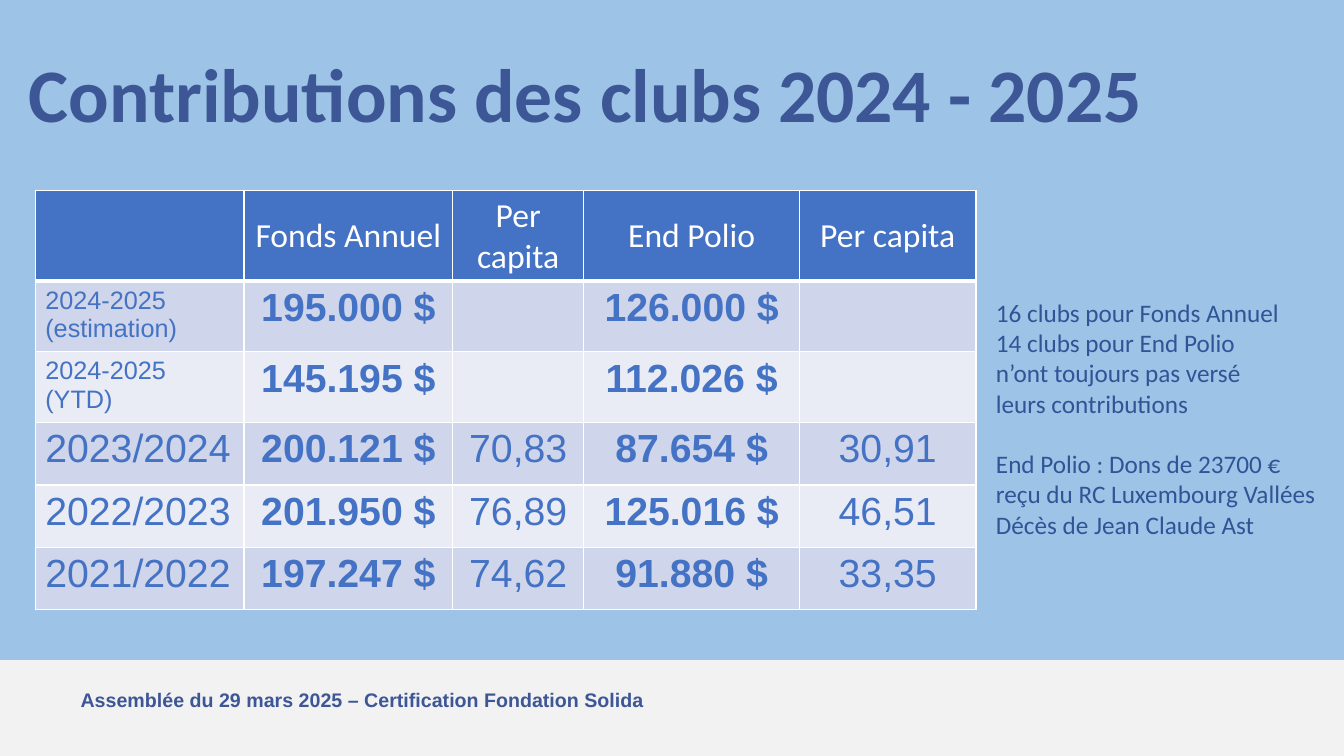
from dataclasses import dataclass

from lxml.etree import SubElement
from pptx import Presentation
from pptx.dml.color import RGBColor
from pptx.enum.shapes import MSO_SHAPE
from pptx.enum.text import MSO_ANCHOR, MSO_AUTO_SIZE, PP_ALIGN
from pptx.oxml.ns import qn
from pptx.util import Inches, Pt


@dataclass(frozen=True)
class Theme:
    """Colours, fonts and type sizes of the slide."""
    background: str = "9DC3E6"
    band: str = "F2F2F2"
    title: str = "3D5695"
    notes: str = "2F5597"
    accent: str = "4472C4"
    stripes: tuple = ("CFD5EA", "E9EBF5")
    white: str = "FFFFFF"
    heading_font: str = "Calibri"
    data_font: str = "Arial"
    title_size: int = 54
    data_size: int = 28
    header_size: int = 24
    text_size: int = 18
    footer_size: int = 14


THEME = Theme()
WIDTH, HEIGHT = 13.33, 7.5
COLUMN_WIDTHS = (2.07, 2.07, 1.3, 2.14, 1.75)
ROW_HEIGHT = 0.62
HEADERS = ("", "Fonds Annuel", "Per capita", "End Polio", "Per capita")
RECORDS = (
    ("2024-2025 (estimation)", "195.000 $", "", "126.000 $", ""),
    ("2024-2025\n(YTD)", "145.195 $", "", "112.026 $", ""),
    ("2023/2024", "200.121 $", "70,83", "87.654 $", "30,91"),
    ("2022/2023", "201.950 $", "76,89", "125.016 $", "46,51"),
    ("2021/2022", "197.247 $", "74,62", "91.880 $", "33,35"),
)
NOTES = (
    ("16 clubs pour Fonds Annuel", "14 clubs pour End Polio",
     "n’ont toujours pas versé", "leurs contributions"),
    ("End Polio : Dons de 23700 €", "reçu du RC Luxembourg Vallées",
     "Décès de Jean Claude Ast"),
)


def place(shape, box):
    """Move and size a shape to a box given in inches."""
    shape.left, shape.top, shape.width, shape.height = map(Inches, box)


def add_run(paragraph, text, font, size, color, bold=False):
    """Add one formatted run to a paragraph."""
    run = paragraph.add_run()
    run.text = text
    run.font.name = font
    run.font.size = Pt(size)
    run.font.bold = bold
    run.font.color.rgb = RGBColor.from_string(color)


def add_title(slide, box):
    """Fill and place the title placeholder."""
    title = slide.shapes.title
    place(title, box)
    frame = title.text_frame
    frame.auto_size = MSO_AUTO_SIZE.NONE
    frame.vertical_anchor = MSO_ANCHOR.BOTTOM
    paragraph = frame.paragraphs[0]
    paragraph.alignment = PP_ALIGN.CENTER
    paragraph.line_spacing = 0.9
    add_run(paragraph, "Contributions des clubs 2024 - 2025",
            THEME.heading_font, THEME.title_size, THEME.title, True)


def add_footer(slide, box):
    """Draw the bottom band with its caption."""
    left, top, width, height = box
    band = slide.shapes.add_shape(MSO_SHAPE.RECTANGLE, *map(Inches, box))
    band.shadow.inherit = False
    band.fill.solid()
    band.fill.fore_color.rgb = RGBColor.from_string(THEME.band)
    band.line.fill.background()
    caption_box = (left + 0.7, top + 0.23, width * 0.47, 0.34)
    caption = slide.shapes.add_textbox(*map(Inches, caption_box))
    caption.text_frame.word_wrap = True
    add_run(caption.text_frame.paragraphs[0],
            "Assemblée du 29 mars 2025 – Certification Fondation Solida",
            THEME.data_font, THEME.footer_size, THEME.title, True)


def style_cell(cell, color, bottom_width=1):
    """Give a cell white borders and a solid fill."""
    properties = cell._tc.get_or_add_tcPr()
    for side, width in (("L", 1), ("R", 1), ("T", 1), ("B", bottom_width)):
        line = SubElement(properties, qn(f"a:ln{side}"), w=str(Pt(width)))
        fill = SubElement(line, qn("a:solidFill"))
        SubElement(fill, qn("a:srgbClr"), val=THEME.white)
    cell.fill.solid()
    cell.fill.fore_color.rgb = RGBColor.from_string(color)


def write_cell(cell, text, alignment, *style):
    """Write the lines of a cell as aligned paragraphs."""
    for index, line in enumerate(text.split("\n") if text else ()):
        frame = cell.text_frame
        paragraph = frame.add_paragraph() if index else frame.paragraphs[0]
        paragraph.alignment = alignment
        add_run(paragraph, line, *style)


def add_contributions(slide, left, top):
    """Build the table of contributions by year."""
    row_count = len(RECORDS) + 1
    table = slide.shapes.add_table(
        row_count, len(HEADERS), Inches(left), Inches(top),
        Inches(sum(COLUMN_WIDTHS)), Inches(ROW_HEIGHT * row_count)).table
    table.horz_banding = False
    for column, width in zip(table.columns, COLUMN_WIDTHS):
        column.width = Inches(width)
    for index, text in enumerate(HEADERS):
        cell = table.cell(0, index)
        style_cell(cell, THEME.accent, 3)
        cell.vertical_anchor = MSO_ANCHOR.MIDDLE
        write_cell(cell, text, PP_ALIGN.CENTER, THEME.heading_font,
                   THEME.header_size, THEME.white)
    for row, record in enumerate(RECORDS, 1):
        for index, text in enumerate(record):
            cell = table.cell(row, index)
            style_cell(cell, THEME.stripes[(row - 1) % 2])
            alignment = PP_ALIGN.CENTER if index else PP_ALIGN.LEFT
            size = THEME.text_size if "(" in text else THEME.data_size
            write_cell(cell, text, alignment, THEME.data_font, size,
                       THEME.accent, text.endswith("$"))


def add_notes(slide, box):
    """Write the remarks beside the table."""
    frame = slide.shapes.add_textbox(*map(Inches, box)).text_frame
    frame.word_wrap = False
    frame.auto_size = MSO_AUTO_SIZE.SHAPE_TO_FIT_TEXT
    paragraph = frame.paragraphs[0]
    for group_index, group in enumerate(NOTES):
        for line_index, line in enumerate(group):
            if group_index or line_index:
                paragraph = frame.add_paragraph()
            if group_index and not line_index:
                paragraph.space_before = Pt(THEME.text_size * 1.2)
            add_run(paragraph, line, THEME.heading_font, THEME.text_size,
                    THEME.notes)


def build_slide(presentation):
    """Compose the contributions slide."""
    slide = presentation.slides.add_slide(presentation.slide_layouts[5])
    slide.background.fill.solid()
    slide.background.fill.fore_color.rgb = RGBColor.from_string(
        THEME.background)
    band_top = 6.55
    table_left, table_top = 0.35, 1.89
    notes_left = table_left + sum(COLUMN_WIDTHS) + 0.1
    add_footer(slide, (0, band_top, WIDTH, HEIGHT - band_top))
    add_title(slide, (0, 0.79, 11.62, 0.64))
    add_contributions(slide, table_left, table_top)
    add_notes(slide, (notes_left, 2.9, 3.47, 2.52))


def main():
    """Create and save the presentation."""
    presentation = Presentation()
    presentation.slide_width = Inches(WIDTH)
    presentation.slide_height = Inches(HEIGHT)
    build_slide(presentation)
    presentation.save("out.pptx")


if __name__ == "__main__":
    main()
